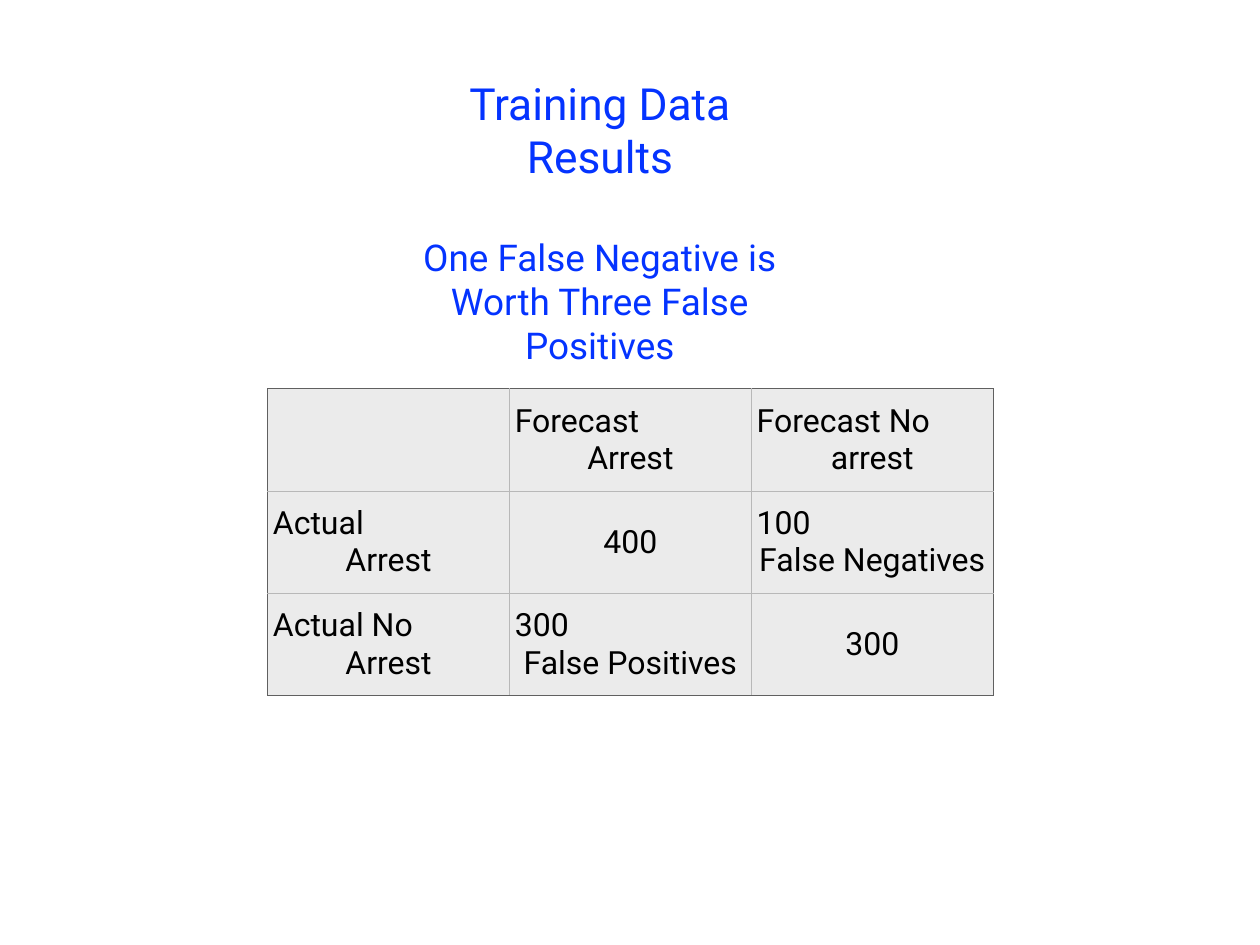
"""Draw a confusion table of arrest forecasts under a two-level heading."""
import dataclasses

import lxml.etree
import pptx
import pptx.dml.color
import pptx.enum.text
import pptx.oxml.ns
import pptx.util

RGBColor = pptx.dml.color.RGBColor
ALIGN = pptx.enum.text.PP_ALIGN
MIDDLE = pptx.enum.text.MSO_ANCHOR.MIDDLE

BLUE = RGBColor(0x04, 0x33, 0xFF)
BLACK = RGBColor(0x00, 0x00, 0x00)
CELL_GREY = RGBColor(0xEB, 0xEB, 0xEB)
OUTER_LINE = RGBColor(0x60, 0x60, 0x60)
INNER_LINE = RGBColor(0xB8, 0xB8, 0xB8)

FONT = "Roboto"
SLIDE_WIDTH = pptx.util.Inches(14.22)
SLIDE_HEIGHT = pptx.util.Inches(10.67)
INSET = pptx.util.Inches(0.06)
COLUMN_PERCENT = 19.2
ROW_PERCENT = 10.83


@dataclasses.dataclass(frozen=True)
class Line:
    text: str
    size: float
    color: RGBColor
    align: ALIGN = ALIGN.CENTER
    gap_before: float = 0


HEADING = [
    Line("Training Data Results", 36, BLUE),
    Line("One False Negative is", 30, BLUE, gap_before=42.2),
    Line("Worth Three False Positives", 30, BLUE),
]
OUTCOMES = [
    ["", "Forecast\nArrest", "Forecast No\narrest"],
    ["Actual\nArrest", "400", "100\nFalse Negatives"],
    ["Actual No\nArrest", "300\nFalse Positives", "300"],
]


def across(percent: float) -> int:
    return round(SLIDE_WIDTH * percent / 100)


def down(percent: float) -> int:
    return round(SLIDE_HEIGHT * percent / 100)


def write_lines(frame, lines: list[Line]) -> None:
    for index, line in enumerate(lines):
        paragraph = frame.add_paragraph() if index else frame.paragraphs[0]
        paragraph.text = line.text
        paragraph.alignment = line.align
        paragraph.space_before = pptx.util.Pt(line.gap_before)
        paragraph.font.name = FONT
        paragraph.font.size = pptx.util.Pt(line.size)
        paragraph.font.color.rgb = line.color


def set_insets(holder) -> None:
    holder.margin_left = holder.margin_right = INSET
    holder.margin_top = holder.margin_bottom = INSET
    holder.vertical_anchor = MIDDLE


def draw_borders(cell, outer_sides: dict[str, bool]) -> None:
    properties = cell._tc.get_or_add_tcPr()
    for position, (side, is_outer) in enumerate(outer_sides.items()):
        border = lxml.etree.Element(pptx.oxml.ns.qn(f"a:ln{side}"), w=str(pptx.util.Pt(1)))
        fill = lxml.etree.SubElement(border, pptx.oxml.ns.qn("a:solidFill"))
        color = OUTER_LINE if is_outer else INNER_LINE
        lxml.etree.SubElement(fill, pptx.oxml.ns.qn("a:srgbClr"), val=str(color))
        properties.insert(position, border)


def cell_lines(text: str) -> list[Line]:
    parts = text.split("\n")
    last = len(parts) - 1
    return [
        Line(part, 26, BLACK, ALIGN.CENTER if index == last else ALIGN.LEFT)
        for index, part in enumerate(parts)
    ]


def draw_heading(slide) -> None:
    heading = slide.shapes.add_textbox(across(30.66), down(12.65), across(33.9), down(21.65))
    frame = heading.text_frame
    frame.word_wrap = True
    set_insets(frame)
    write_lines(frame, HEADING)


def draw_outcomes(slide) -> None:
    row_count, column_count = len(OUTCOMES), len(OUTCOMES[0])
    table = slide.shapes.add_table(
        row_count, column_count, across(21.24), down(41.14),
        across(column_count * COLUMN_PERCENT), down(row_count * ROW_PERCENT),
    ).table
    table.first_row = table.horz_banding = False
    for row, texts in enumerate(OUTCOMES):
        for column, text in enumerate(texts):
            cell = table.cell(row, column)
            set_insets(cell)
            cell.fill.solid()
            cell.fill.fore_color.rgb = CELL_GREY
            write_lines(cell.text_frame, cell_lines(text))
            draw_borders(cell, {
                "L": column == 0,
                "R": column == column_count - 1,
                "T": row == 0,
                "B": row == row_count - 1,
            })


def main() -> None:
    deck = pptx.Presentation()
    deck.slide_width, deck.slide_height = SLIDE_WIDTH, SLIDE_HEIGHT
    slide = deck.slides.add_slide(deck.slide_layouts[6])
    draw_outcomes(slide)
    draw_heading(slide)
    deck.save("out.pptx")


if __name__ == "__main__":
    main()
